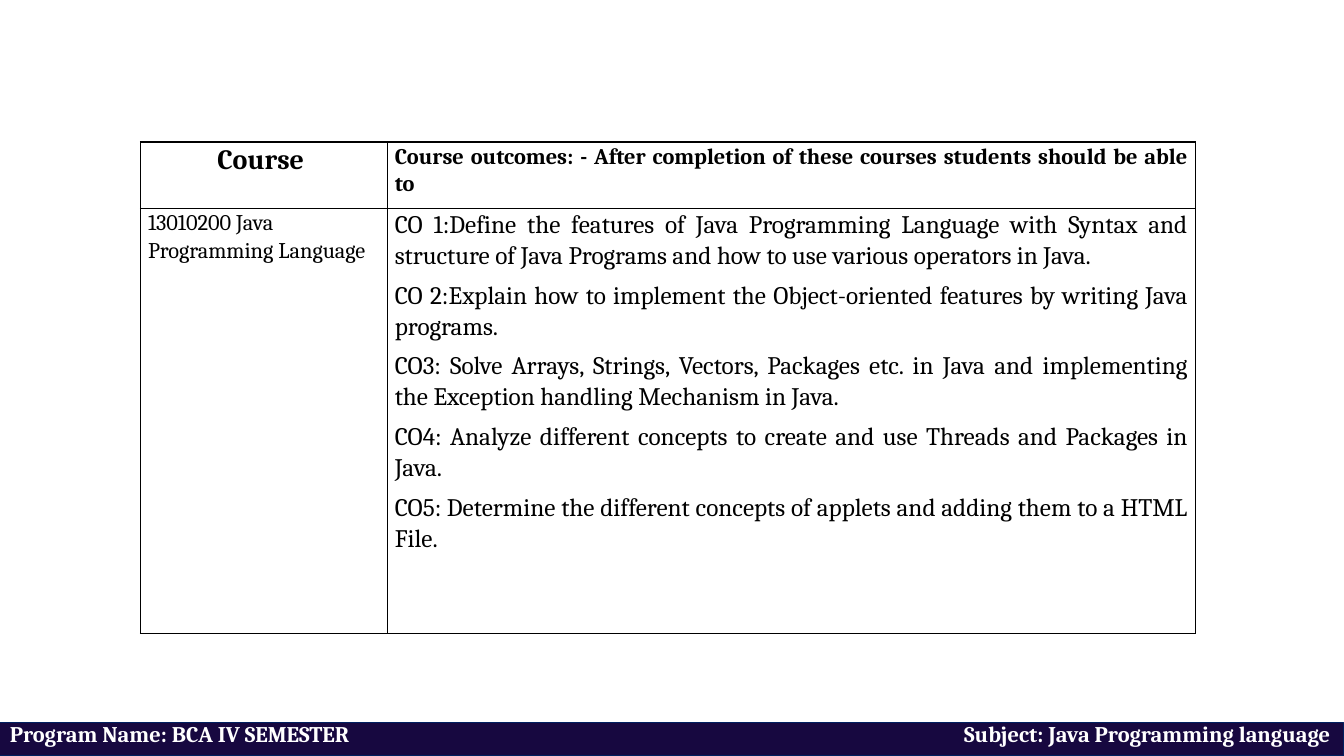
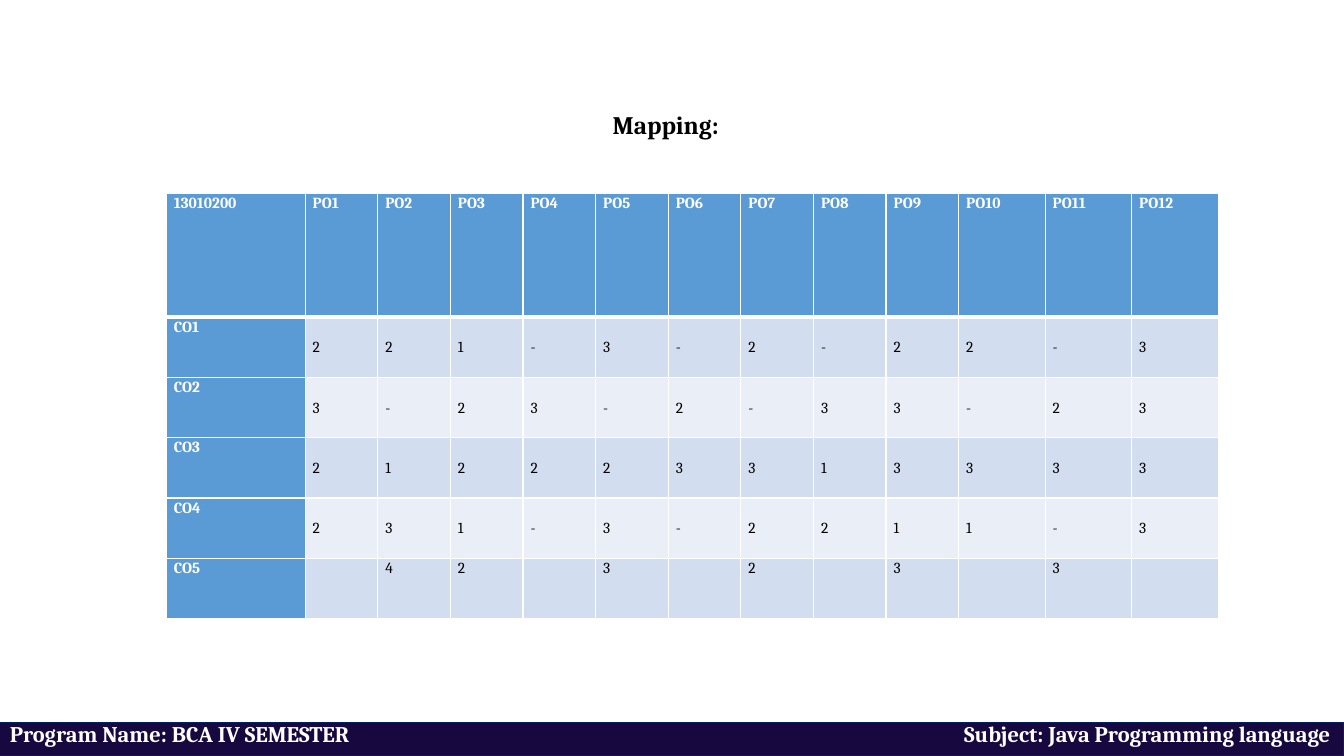
"""Build the course outcome and mapping slides of a Java course."""
from dataclasses import dataclass

import lxml.etree
import pptx
import pptx.dml.color
import pptx.enum.shapes
import pptx.enum.text
import pptx.oxml.ns
import pptx.util

Cm = pptx.util.Cm
Pt = pptx.util.Pt
ALIGN = pptx.enum.text.PP_ALIGN
ANCHOR = pptx.enum.text.MSO_ANCHOR
qn = pptx.oxml.ns.qn

FONT = "Cambria"
COLORS = {
    "black": "000000",
    "white": "FFFFFF",
    "band": "170840",
    "band_edge": "002060",
    "header": "5B9BD5",
    "odd": "D2DEEF",
    "even": "EAEFF7",
}
PAGE_WIDTH, PAGE_HEIGHT = 33.87, 19.05
BAND_TOP, BAND_HEIGHT = 18.21, 0.84

OUTCOMES = (
    "CO 1:Define the features of Java Programming Language with Syntax and "
    "structure of Java Programs and how to use various operators in Java.",
    "CO 2:Explain how to implement the Object-oriented features by writing Java programs.",
    "CO3: Solve Arrays, Strings, Vectors, Packages etc. in Java and implementing "
    "the Exception handling Mechanism in Java.",
    "CO4: Analyze different concepts to create and use Threads and Packages in Java.",
    "CO5: Determine the different concepts of applets and adding them to a HTML File.",
)
LEVELS = (
    ("2", "2", "1", "-", "3", "-", "2", "-", "2", "2", "-", "3"),
    ("3", "-", "2", "3", "-", "2", "-", "3", "3", "-", "2", "3"),
    ("2", "1", "2", "2", "2", "3", "3", "1", "3", "3", "3", "3"),
    ("2", "3", "1", "-", "3", "-", "2", "2", "1", "1", "-", "3"),
    ("", "4", "2", "", "3", "", "2", "", "3", "", "3", ""),
)


@dataclass(frozen=True)
class Entry:
    """Text and look of one table cell."""
    lines: tuple[str, ...]
    size: float
    bold: bool = False
    color: str = "black"
    align: ALIGN = ALIGN.JUSTIFY
    anchor: ANCHOR = ANCHOR.TOP
    after: float = 0
    fill: str | None = None
    edge: str = "black"
    bottom: float = 1


@dataclass(frozen=True)
class Grid:
    """Place, track sizes in centimetres and cells of one table."""
    left: float
    top: float
    widths: tuple[float, ...]
    heights: tuple[float, ...]
    rows: list[list[Entry]]


def rgb(name: str) -> pptx.dml.color.RGBColor:
    """Look up a colour by name."""
    return pptx.dml.color.RGBColor.from_string(COLORS[name])


def style_para(para, size: float, bold: bool, color: str) -> None:
    """Set the font of a whole paragraph."""
    para.font.name = FONT
    para.font.size = Pt(size)
    para.font.bold = bold
    para.font.color.rgb = rgb(color)


def add_page(deck):
    """Add a blank page with the footer band."""
    page = deck.slides.add_slide(deck.slide_layouts[6])
    box = page.shapes.add_shape(
        pptx.enum.shapes.MSO_SHAPE.RECTANGLE,
        0, Cm(BAND_TOP), Cm(PAGE_WIDTH), Cm(BAND_HEIGHT))
    box.shadow.inherit = False
    box.fill.solid()
    box.fill.fore_color.rgb = rgb("band")
    box.line.color.rgb = rgb("band_edge")
    box.line.width = Pt(0.75)
    box.text_frame.word_wrap = True
    box.text_frame.vertical_anchor = ANCHOR.TOP
    para = box.text_frame.paragraphs[0]
    para.text = "Program Name: BCA IV SEMESTER\tSubject: Java Programming language"
    para.alignment = ALIGN.LEFT
    para.line_spacing = 0.7
    properties = para._p.get_or_add_pPr()
    stops = lxml.etree.SubElement(properties, qn("a:tabLst"))
    lxml.etree.SubElement(stops, qn("a:tab"), pos=str(Cm(33.28)), algn="r")
    style_para(para, 16, True, "white")
    return page


def set_borders(cell, color: str, bottom: float) -> None:
    """Draw the four cell borders, all one point but the bottom one."""
    properties = cell._tc.get_or_add_tcPr()
    for index, side in enumerate(("lnL", "lnR", "lnT", "lnB")):
        width = Pt(bottom if side == "lnB" else 1)
        line = lxml.etree.Element(qn(f"a:{side}"), w=str(width))
        fill = lxml.etree.SubElement(line, qn("a:solidFill"))
        lxml.etree.SubElement(fill, qn("a:srgbClr"), val=COLORS[color])
        properties.insert(index, line)


def fill_cell(cell, entry: Entry) -> None:
    """Write and format one table cell."""
    cell.margin_left = cell.margin_right = Cm(0.19)
    cell.margin_top = cell.margin_bottom = 0
    cell.vertical_anchor = entry.anchor
    if entry.fill:
        cell.fill.solid()
        cell.fill.fore_color.rgb = rgb(entry.fill)
    else:
        cell.fill.background()
    set_borders(cell, entry.edge, entry.bottom)
    cell.text = "\n".join(entry.lines)
    for para in cell.text_frame.paragraphs:
        para.alignment = entry.align
        para.line_spacing = 1.07
        para.space_after = Pt(entry.after)
        style_para(para, entry.size, entry.bold, entry.color)


def add_grid(page, grid: Grid) -> None:
    """Draw a table."""
    table = page.shapes.add_table(
        len(grid.heights), len(grid.widths), Cm(grid.left), Cm(grid.top),
        Cm(sum(grid.widths)), Cm(sum(grid.heights))).table
    table.first_row = table.horz_banding = False
    for column, width in zip(table.columns, grid.widths):
        column.width = Cm(width)
    for row, height, entries in zip(table.rows, grid.heights, grid.rows):
        row.height = Cm(height)
        for cell, entry in zip(row.cells, entries):
            fill_cell(cell, entry)


def add_heading(page, text: str) -> None:
    """Write the heading above the mapping table."""
    box = page.shapes.add_textbox(Cm(15.19), Cm(2.64), Cm(3.4), Cm(1.03))
    box.text_frame.word_wrap = True
    para = box.text_frame.paragraphs[0]
    para.text = text
    style_para(para, 18, True, "black")


def outcome_grid() -> Grid:
    """Describe the table of course outcomes."""
    title = "Course outcomes: - After completion of these courses students should be able to"
    return Grid(3.54, 3.58, (6.22, 20.37), (1.68, 10.7), [
        [Entry(("Course ",), 20, bold=True, align=ALIGN.CENTER, after=6),
         Entry((title,), 16, bold=True, after=6)],
        [Entry(("13010200 Java Programming Language",), 16, align=ALIGN.LEFT, after=6),
         Entry(OUTCOMES, 18, after=6)],
    ])


def mapping_grid() -> Grid:
    """Describe the table that maps course outcomes to programme outcomes."""
    def label(text: str, bottom: float = 1) -> Entry:
        return Entry((text,), 11, bold=True, color="white", fill="header",
                     edge="white", bottom=bottom)

    titles = ["13010200"] + [f"PO{number}" for number in range(1, 13)]
    rows = [[label(title, bottom=3) for title in titles]]
    for number, levels in enumerate(LEVELS, start=1):
        fill = "odd" if number % 2 else "even"
        anchor = ANCHOR.TOP if number == len(LEVELS) else ANCHOR.MIDDLE
        rows.append([label(f"CO{number}")] + [
            Entry((level,), 11, anchor=anchor, fill=fill, edge="white")
            for level in levels])
    widths = (3.5,) + (1.83,) * 9 + (2.18,) * 3
    return Grid(4.19, 4.88, widths, (3.11,) + (1.52,) * len(LEVELS), rows)


def main() -> None:
    """Build and save the deck."""
    deck = pptx.Presentation()
    deck.slide_width, deck.slide_height = Cm(PAGE_WIDTH), Cm(PAGE_HEIGHT)
    add_grid(add_page(deck), outcome_grid())
    mapping = add_page(deck)
    add_grid(mapping, mapping_grid())
    add_heading(mapping, "Mapping:")
    deck.save("out.pptx")


if __name__ == "__main__":
    main()
